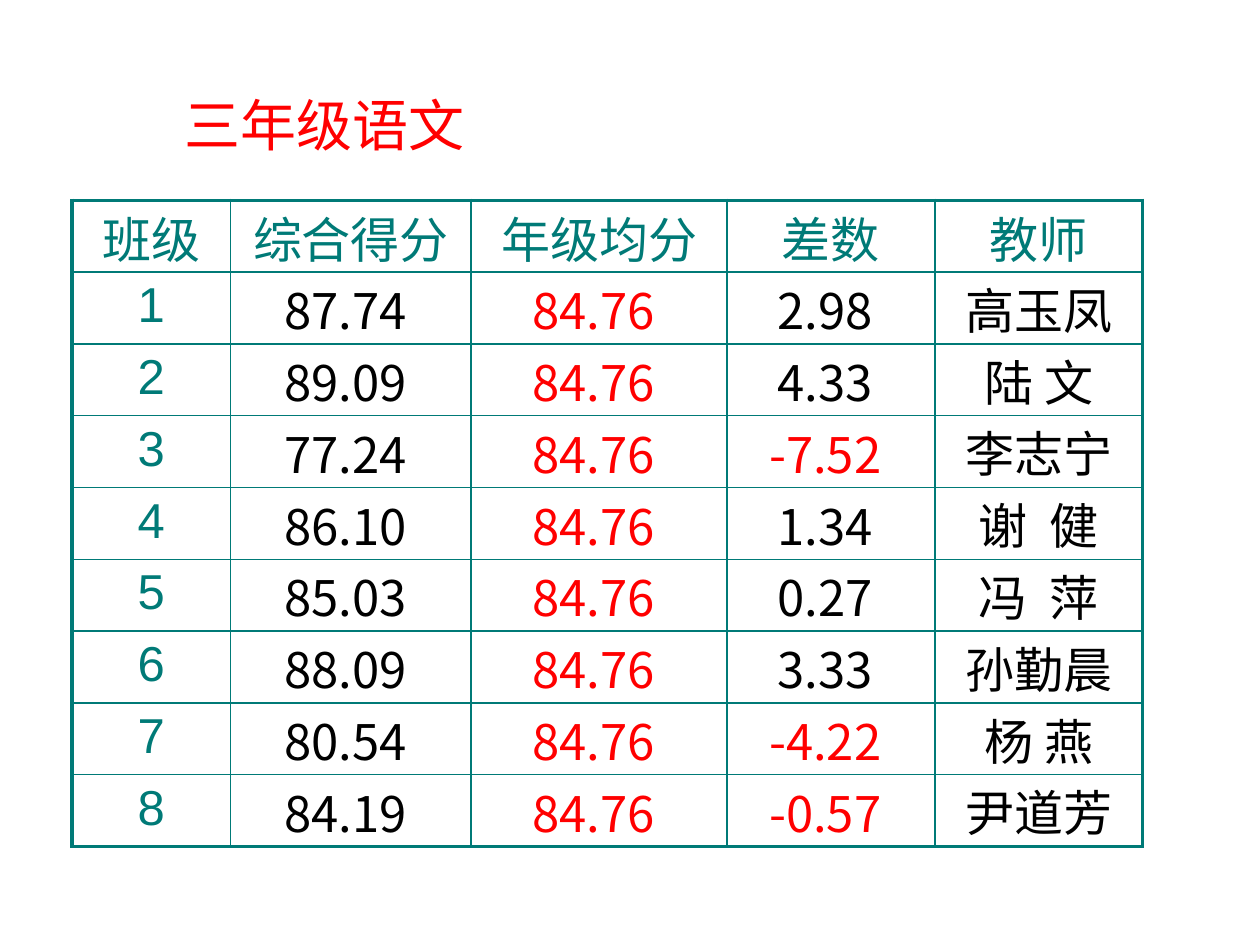
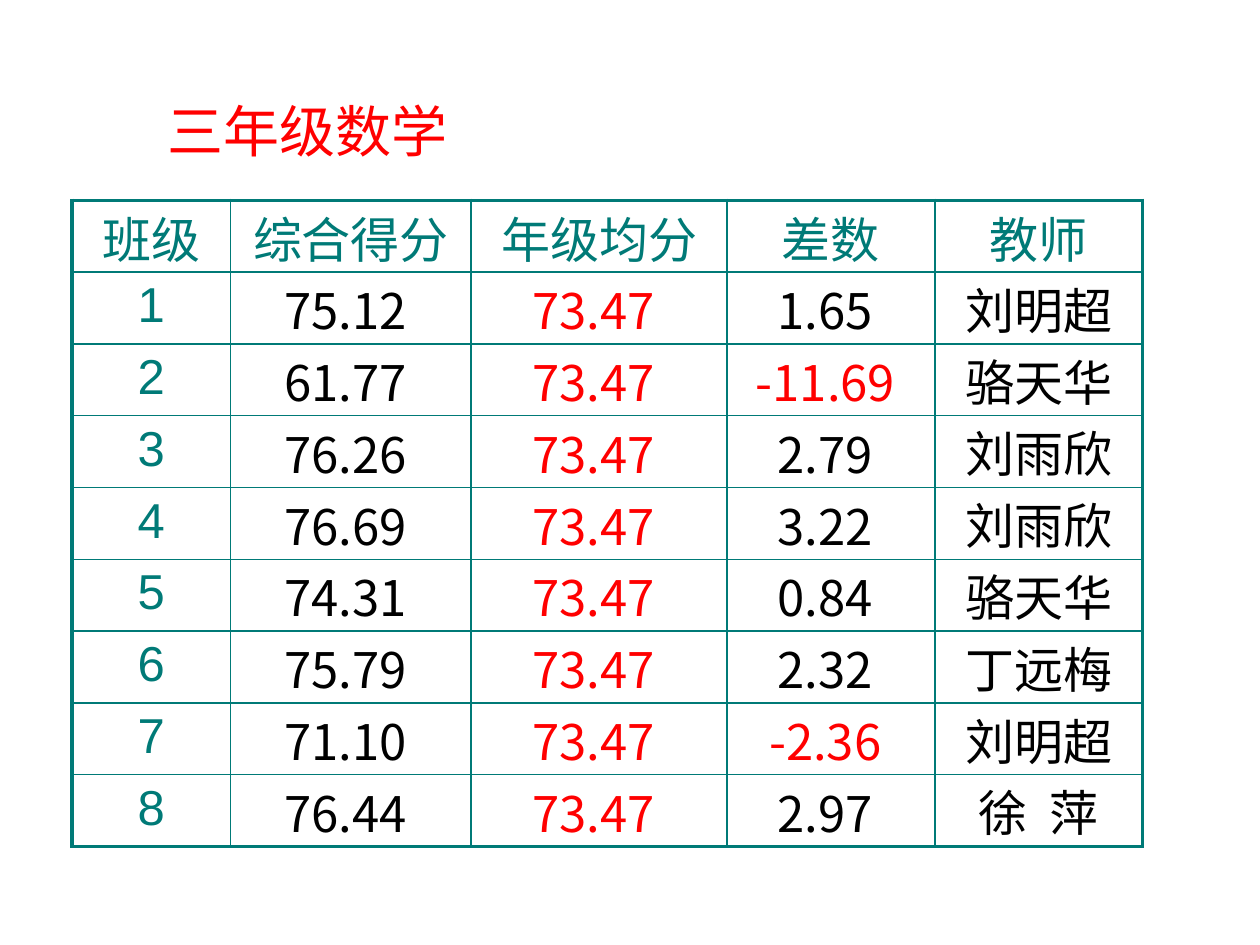
from lxml.etree import SubElement
from pptx import Presentation
from pptx.dml.color import RGBColor
from pptx.enum.text import MSO_ANCHOR, PP_ALIGN
from pptx.oxml.ns import qn
from pptx.util import Inches, Pt

COLORS = {"teal": "007A77", "red": "FF0000", "black": "000000"}
LATIN_FONT, CHINESE_FONT = "Arial", "Noto Sans CJK SC"
HEADINGS = ["班级", "综合得分", "年级均分", "差数", "教师"]
COLUMN_WIDTHS = [1.26, 1.91, 2.03, 1.65, 1.65]
ROW_HEIGHT = 0.57
TABLE_CORNER = (0.57, 1.59)
INNER_LINE, OUTER_LINE = 1, 2.25
NUMBER_SHIFT = 0.09  # right margin that sets numbers slightly left of centre

# Each subject: title, title box, grade average, (score, difference, teacher) by class
SUBJECTS = [
    ("三年级语文", (0.48, 0.67, 4.2, 0.63), "84.76", [
        ("87.74", "2.98", "高玉凤"),
        ("89.09", "4.33", "陆 文"),
        ("77.24", "-7.52", "李志宁"),
        ("86.10", "1.34", "谢  健"),
        ("85.03", "0.27", "冯  萍"),
        ("88.09", "3.33", "孙勤晨"),
        ("80.54", "-4.22", "杨 燕"),
        ("84.19", "-0.57", "尹道芳"),
    ]),
    ("三年级数学", (0.6, 0.72, 3.69, 0.63), "73.47", [
        ("75.12", "1.65", "刘明超"),
        ("61.77", "-11.69", "骆天华"),
        ("76.26", "2.79", "刘雨欣"),
        ("76.69", "3.22", "刘雨欣"),
        ("74.31", "0.84", "骆天华"),
        ("75.79", "2.32", "丁远梅"),
        ("71.10", "-2.36", "刘明超"),
        ("76.44", "2.97", "徐  萍"),
    ]),
]


def style_paragraph(paragraph, size, color, font):
    paragraph.alignment = PP_ALIGN.CENTER
    paragraph.font.size = Pt(size)
    paragraph.font.bold = False
    paragraph.font.name = font
    paragraph.font.color.rgb = RGBColor.from_string(COLORS[color])


def set_margins(cell, top=0, right=0, bottom=0, left=0):
    cell.margin_top, cell.margin_right = Inches(top), Inches(right)
    cell.margin_bottom, cell.margin_left = Inches(bottom), Inches(left)


def draw_borders(cell, outer_sides):
    """Line all four sides, thicker on those at the table's edge."""
    properties = cell._tc.get_or_add_tcPr()
    for side in "LRTB":
        width = OUTER_LINE if side in outer_sides else INNER_LINE
        line = SubElement(properties, qn(f"a:ln{side}"), w=str(Pt(width)))
        fill = SubElement(line, qn("a:solidFill"))
        SubElement(fill, qn("a:srgbClr"), val=COLORS["teal"])


def format_cell(cell, row, column):
    """Style a filled cell by its place: heading, class, number or teacher."""
    color, font = "black", CHINESE_FONT
    if row == 0:
        color, font = "teal", LATIN_FONT
        set_margins(cell)
        cell.vertical_anchor = MSO_ANCHOR.BOTTOM
    elif column == 0:
        color, font = "teal", LATIN_FONT
        cell.vertical_anchor = MSO_ANCHOR.TOP
    elif column == len(HEADINGS) - 1:
        set_margins(cell)
        cell.vertical_anchor = MSO_ANCHOR.MIDDLE
    else:
        if column == 2 or cell.text.startswith("-"):
            color = "red"
        set_margins(cell, right=NUMBER_SHIFT)
        cell.vertical_anchor = MSO_ANCHOR.BOTTOM
    style_paragraph(cell.text_frame.paragraphs[0], 28, color, font)


def add_score_table(slide, corner, average, results):
    rows = [HEADINGS] + [
        [str(number), score, average, difference, teacher]
        for number, (score, difference, teacher) in enumerate(results, 1)
    ]
    last_row, last_column = len(rows) - 1, len(HEADINGS) - 1
    left, top = corner
    scores = slide.shapes.add_table(
        len(rows), len(HEADINGS), Inches(left), Inches(top),
        Inches(sum(COLUMN_WIDTHS)), Inches(ROW_HEIGHT * len(rows))).table
    scores.first_row = scores.horz_banding = False
    for column, width in zip(scores.columns, COLUMN_WIDTHS):
        column.width = Inches(width)
    for r, values in enumerate(rows):
        scores.rows[r].height = Inches(ROW_HEIGHT)
        for c, value in enumerate(values):
            cell = scores.cell(r, c)
            cell.text = value
            edges = {"L": c == 0, "R": c == last_column,
                     "T": r == 0, "B": r == last_row}
            draw_borders(cell, [side for side, outer in edges.items() if outer])
            cell.fill.background()
            format_cell(cell, r, c)


def set_title(slide, text, box):
    title = slide.shapes.title
    title.left, title.top, title.width, title.height = map(Inches, box)
    title.text = text
    title.text_frame.vertical_anchor = MSO_ANCHOR.MIDDLE
    style_paragraph(title.text_frame.paragraphs[0], 32, "red", LATIN_FONT)


def add_subject_slide(deck, title, title_box, average, results):
    slide = deck.slides.add_slide(deck.slide_layouts.get_by_name("Title Only"))
    set_title(slide, title, title_box)
    add_score_table(slide, TABLE_CORNER, average, results)


def main():
    deck = Presentation()
    deck.slide_width, deck.slide_height = Inches(10), Inches(7.5)
    for subject in SUBJECTS:
        add_subject_slide(deck, *subject)
    deck.save("out.pptx")


if __name__ == "__main__":
    main()
